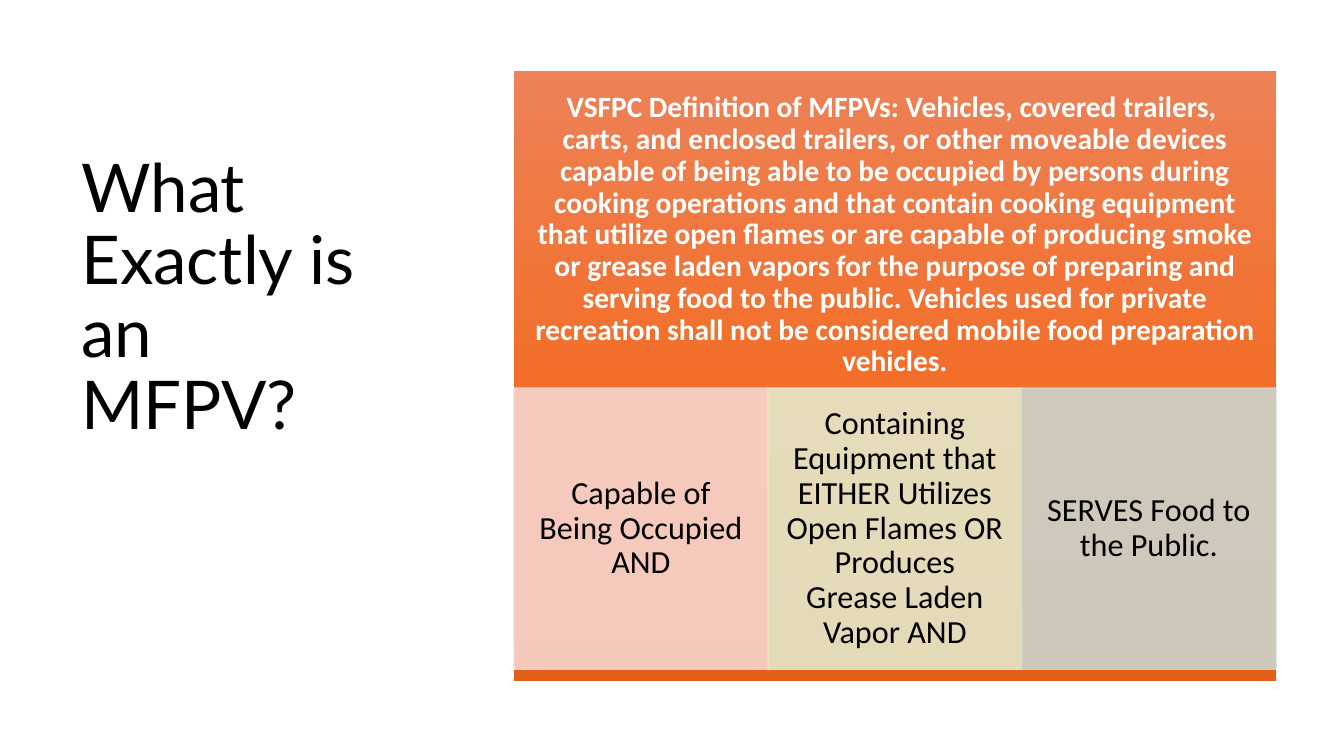
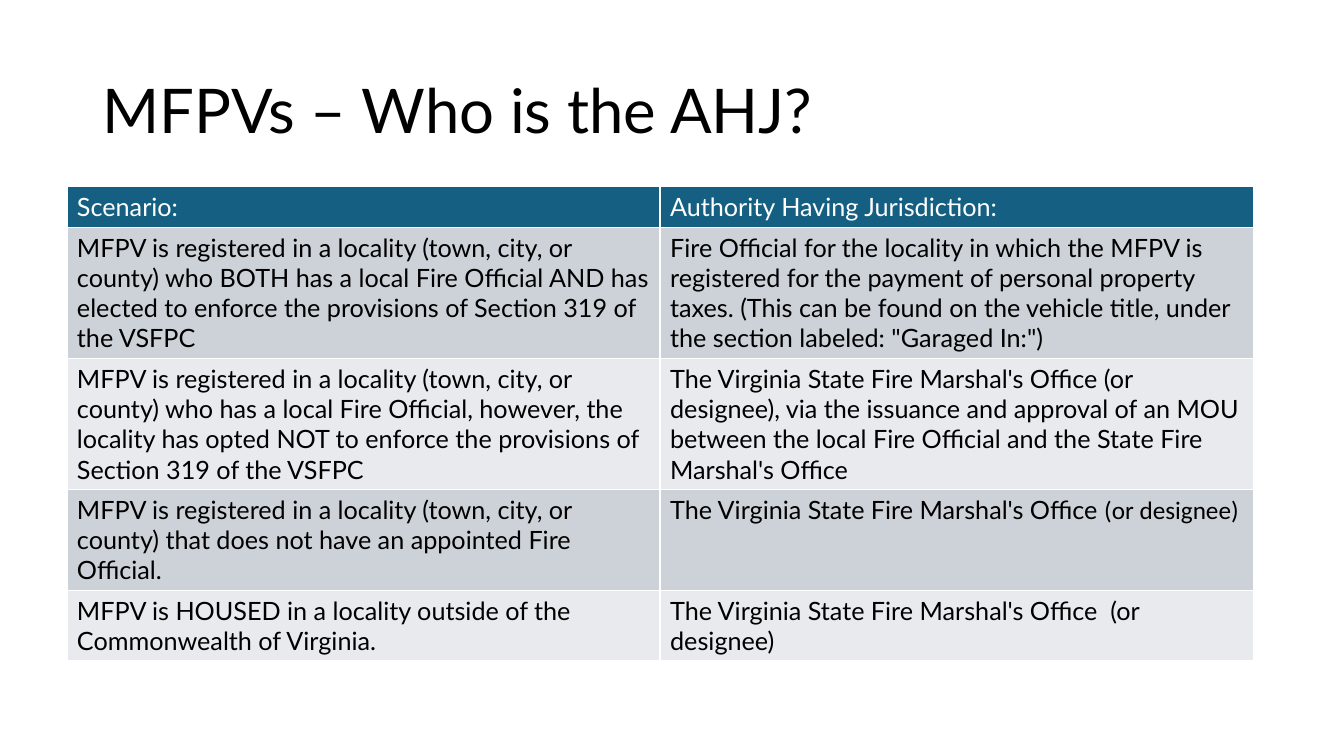
from copy import deepcopy

from lxml.etree import SubElement
from pptx import Presentation
from pptx.dml.color import RGBColor
from pptx.enum.shapes import MSO_SHAPE
from pptx.enum.text import MSO_ANCHOR, PP_ALIGN
from pptx.oxml.ns import qn
from pptx.util import Pt

# Shared style
BLACK = RGBColor(0x00, 0x00, 0x00)
WHITE = RGBColor(0xFF, 0xFF, 0xFF)
TEAL = RGBColor(0x15, 0x60, 0x82)
BANDS = [RGBColor(0xCC, 0xD2, 0xD8), RGBColor(0xE8, 0xEA, 0xED)]
PANEL_STOPS = [
    (0, RGBColor(0xED, 0x82, 0x57)),
    (0.5, RGBColor(0xF2, 0x6E, 0x29)),
    (1, RGBColor(0xE2, 0x5F, 0x1A)),
]
PINK = RGBColor(0xF7, 0xD5, 0xCE)
OLIVE = RGBColor(0xE5, 0xE8, 0xCA)
SAGE = RGBColor(0xCC, 0xD4, 0xCD)
TITLE_FONT = "Lato"
BODY_FONT = "Calibri"

# Content
DEFINITION_TITLE = "What Exactly is an MFPV?"
DEFINITION = (
    "VSFPC Definition of MFPVs: Vehicles, covered trailers,  carts, and enclosed "
    "trailers, or other moveable devices capable of being able to be occupied by "
    "persons during cooking operations and that contain cooking equipment that "
    "utilize open flames or are capable of producing smoke or grease laden vapors "
    "for the purpose of preparing and serving food to the public. Vehicles used for "
    "private recreation shall not be considered mobile food preparation vehicles."
)
CRITERIA = [
    ("Capable of Being Occupied AND", PINK),
    ("Containing Equipment that EITHER Utilizes Open Flames OR Produces "
     "Grease Laden Vapor AND", OLIVE),
    ("SERVES Food to the Public.", SAGE),
]

AHJ_TITLE = "MFPVs – Who is the AHJ?"
# Each row: lines of text it holds, then cells as lists of (text, font) runs
AHJ_ROWS = [
    (1, [("Scenario:", TITLE_FONT)],
     [("Authority Having Jurisdiction:", TITLE_FONT)]),
    (4, [("MFPV is registered in a locality (town, city, or county) who BOTH has a "
          "local Fire Official AND has elected to enforce the provisions of "
          "Section 319 of the VSFPC", TITLE_FONT)],
     [("Fire Official for the locality in which the MFPV is registered for the "
       "payment of personal property taxes. (This can be found on the vehicle "
       "title, under the section labeled: \"Garaged In:\")", TITLE_FONT)]),
    (4, [("MFPV is registered in a locality (town, city, or county) who has a local "
          "Fire Official, however, the locality has opted NOT to enforce the "
          "provisions of Section 319 of the VSFPC", TITLE_FONT)],
     [("The Virginia State Fire Marshal's Office (or designee), via the issuance "
       "and approval of an MOU between the local Fire Official and the State Fire "
       "Marshal's Office", TITLE_FONT)]),
    (3, [("MFPV is registered in a locality (town, city, or county) that does not "
          "have an appointed Fire Official.", TITLE_FONT)],
     [("The Virginia State Fire Marshal's Office ", TITLE_FONT),
      ("(or designee)", BODY_FONT)]),
    (2, [("MFPV is HOUSED in a locality outside of the Commonwealth of Virginia.",
          TITLE_FONT)],
     [("The Virginia State Fire Marshal's Office  (or designee)", TITLE_FONT)]),
]


def add_run(p, text, size, font, color, bold=False):
    r = p.add_run()
    r.text = text
    r.font.size = Pt(size)
    r.font.name = font
    r.font.bold = bold
    r.font.color.rgb = color


def fill_text(sp, text, size, font, color, bold=False, align=PP_ALIGN.LEFT,
              anchor=MSO_ANCHOR.MIDDLE, insets=(7.2, 3.6, 7.2, 3.6)):
    tf = sp.text_frame
    tf.word_wrap = True
    tf.vertical_anchor = anchor
    (tf.margin_left, tf.margin_top,
     tf.margin_right, tf.margin_bottom) = [Pt(v) for v in insets]
    p = tf.paragraphs[0]
    p.alignment = align
    p.line_spacing = 0.9
    add_run(p, text, size, font, color, bold)


def add_textbox(s, box, *args, **kwargs):
    fill_text(s.shapes.add_textbox(*[Pt(v) for v in box]), *args, **kwargs)


def add_title(s, box, text, size, **kwargs):
    add_textbox(s, box, text, size, TITLE_FONT, BLACK, **kwargs)


def add_rect(s, box):
    sp = s.shapes.add_shape(MSO_SHAPE.RECTANGLE, *[Pt(v) for v in box])
    sp.shadow.inherit = False
    return sp


def set_gradient(sp, stops):
    sp.fill.gradient()
    sp.fill.gradient_angle = 270
    stop_list = sp.element.spPr.find(".//" + qn("a:gsLst"))
    while len(stop_list) < len(stops):
        stop_list.append(deepcopy(stop_list[0]))
    for stop, (position, color) in zip(sp.fill.gradient_stops, stops):
        stop.position = position
        stop.color.rgb = color


def set_opacity(sp, percent):
    for clr in sp.element.spPr.iter(qn("a:srgbClr")):
        SubElement(clr, qn("a:alpha")).set("val", str(percent * 1000))


def build_definition(s):
    add_title(s, (51, 106.5, 231, 350.5), DEFINITION_TITLE, 48,
              anchor=MSO_ANCHOR.TOP, insets=(7.2, 3.6, 14, 3.6))

    # Orange panel with the definition
    left, top, width, height = 367.2, 50.4, 544.2, 436.3
    panel = add_rect(s, (left, top, width, height))
    set_gradient(panel, PANEL_STOPS)
    panel.line.fill.background()
    add_textbox(s, (left, top, width, 235.4), DEFINITION, 21, BODY_FONT, WHITE,
                bold=True, align=PP_ALIGN.CENTER, insets=(13.4, 11.5, 13.4, 11.5))

    # Criteria tiles, equal widths across the panel
    tile_w = width / len(CRITERIA)
    for i, (text, color) in enumerate(CRITERIA):
        tile = add_rect(s, (left + i * tile_w, 277.2, tile_w, 200.9))
        tile.fill.solid()
        tile.fill.fore_color.rgb = color
        tile.line.color.rgb = color
        tile.line.width = Pt(1)
        set_opacity(tile, 90)
        fill_text(tile, text, 23, BODY_FONT, BLACK, align=PP_ALIGN.CENTER,
                  insets=(12.8, 2.3, 12.8, 2.3))


def build_ahj(s):
    add_title(s, (66.2, 28.8, 828, 104.4), AHJ_TITLE, 44)

    # Scenario table; row height follows the number of text lines
    size, col_w, min_height = 18, 423.7, 29.2
    heights = [max(min_height, lines * size * 1.2 + 7.2) for lines, *_ in AHJ_ROWS]
    table = s.shapes.add_table(len(AHJ_ROWS), 2, Pt(47.8), Pt(133.2),
                               Pt(2 * col_w), Pt(sum(heights))).table
    for col in table.columns:
        col.width = Pt(col_w)
    for i, (_, *cells) in enumerate(AHJ_ROWS):
        table.rows[i].height = Pt(heights[i])
        for j, runs in enumerate(cells):
            cell = table.cell(i, j)
            cell.fill.solid()
            cell.fill.fore_color.rgb = BANDS[(i - 1) % 2] if i else TEAL
            for text, font in runs:
                add_run(cell.text_frame.paragraphs[0], text, size, font,
                        BLACK if i else WHITE)


def main():
    prs = Presentation()
    prs.slide_width, prs.slide_height = Pt(960), Pt(540)
    for build in (build_definition, build_ahj):
        build(prs.slides.add_slide(prs.slide_layouts[6]))
    prs.save("out.pptx")


if __name__ == "__main__":
    main()
